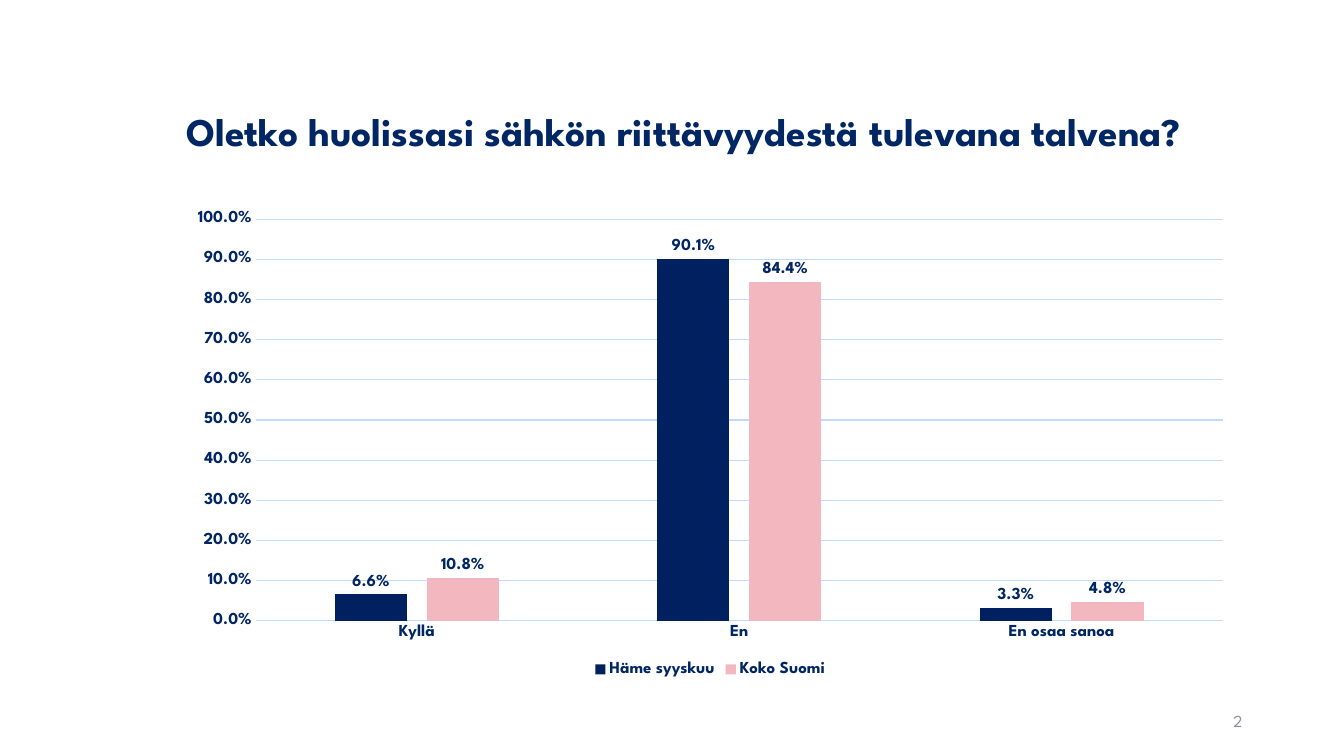
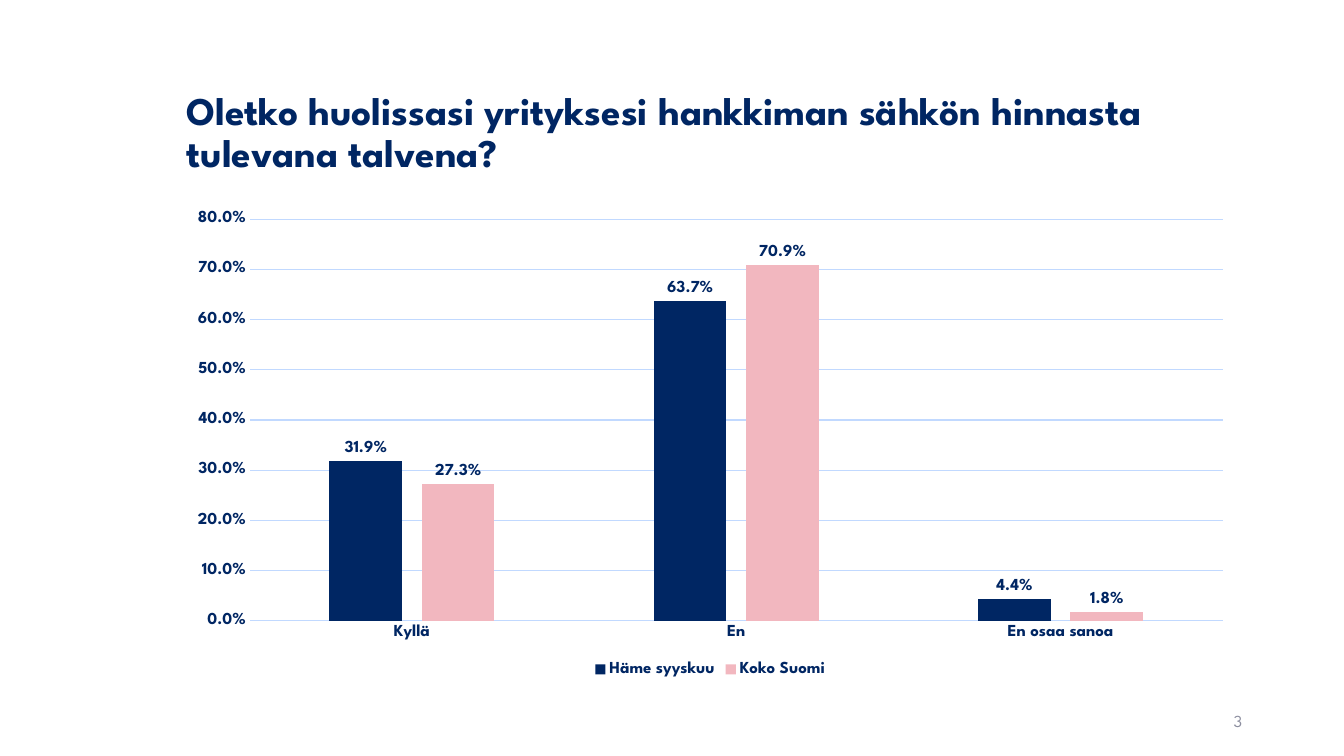
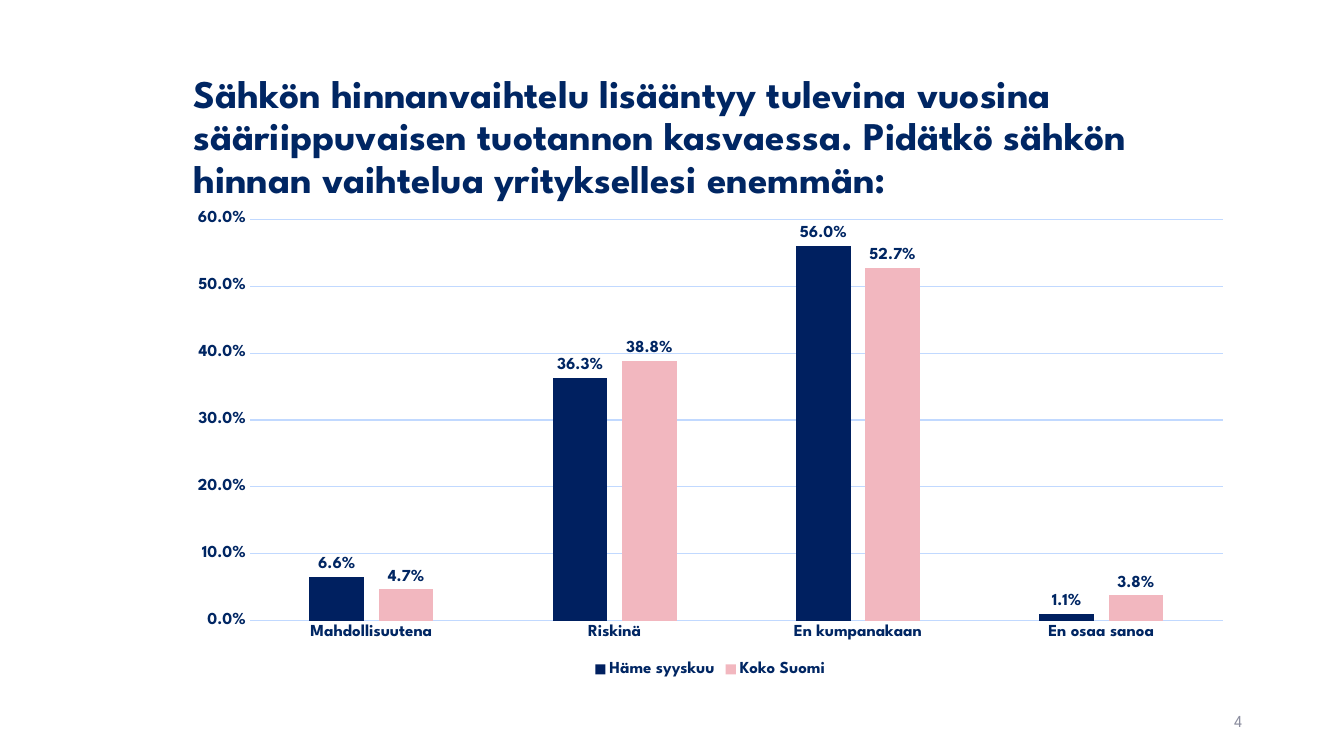
"""Build three survey slides, each with a question and a column chart of the answers."""

from dataclasses import dataclass

from pptx import Presentation
from pptx.chart.data import CategoryChartData
from pptx.dml.color import RGBColor
from pptx.enum.chart import XL_CHART_TYPE, XL_LABEL_POSITION, XL_LEGEND_POSITION, XL_TICK_MARK
from pptx.enum.text import MSO_ANCHOR, MSO_AUTO_SIZE, PP_ALIGN
from pptx.util import Inches, Pt

COLUMN_CLUSTERED = XL_CHART_TYPE.COLUMN_CLUSTERED
OUTSIDE_END = XL_LABEL_POSITION.OUTSIDE_END
LEGEND_BOTTOM = XL_LEGEND_POSITION.BOTTOM
NO_TICK = XL_TICK_MARK.NONE
MIDDLE = MSO_ANCHOR.MIDDLE
NO_AUTOFIT = MSO_AUTO_SIZE.NONE
LEFT, RIGHT = PP_ALIGN.LEFT, PP_ALIGN.RIGHT

FONT = "League Spartan"
NAVY = "002663"
DEEP_NAVY = "002060"
PINK = "F2B7BF"
GRID_BLUE = "C1D9FF"
GREY = "8C8E9F"
PERCENT = "0.0%"
TITLE_ONLY = 5
FIRST_NUMBER = 2
YES_NO = ("Kyllä", "En", "En osaa sanoa")


@dataclass(frozen=True)
class Question:
    """A survey question with its answers by region."""

    title: str
    answers: tuple[str, ...]
    hame: tuple[float, ...]
    finland: tuple[float, ...]
    axis_top: float
    hame_color: str = DEEP_NAVY
    title_left: float = 1.75
    title_top: float = 0.57


QUESTIONS = (
    Question(
        "Oletko huolissasi sähkön riittävyydestä tulevana talvena?",
        YES_NO, (0.066, 0.901, 0.033), (0.108, 0.844, 0.048), 1.0,
    ),
    Question(
        "Oletko huolissasi yrityksesi hankkiman sähkön hinnasta tulevana talvena?",
        YES_NO, (0.319, 0.637, 0.044), (0.273, 0.709, 0.018), 0.8,
        hame_color=NAVY,
    ),
    Question(
        "Sähkön hinnanvaihtelu lisääntyy tulevina vuosina sääriippuvaisen tuotannon "
        "kasvaessa. Pidätkö sähkön hinnan vaihtelua yrityksellesi enemmän:",
        ("Mahdollisuutena", "Riskinä", "En kumpanakaan", "En osaa sanoa"),
        (0.066, 0.363, 0.56, 0.011), (0.047, 0.388, 0.527, 0.038), 0.6,
        title_left=1.82, title_top=0.61,
    ),
)


def rgb(color: str) -> RGBColor:
    """Turn a hex string into a colour."""
    return RGBColor.from_string(color)


def style_font(font, size: float = 12, color: str = NAVY, bold: bool = True) -> None:
    """Apply the shared typeface with a size, colour and weight."""
    font.name = FONT
    font.size = Pt(size)
    font.bold = bold
    font.color.rgb = rgb(color)


def style_line(line) -> None:
    """Draw a chart line in the pale grid colour."""
    line.color.rgb = rgb(GRID_BLUE)
    line.width = Pt(0.75)


def add_title(slide, question: Question) -> None:
    """Place the question in the title placeholder."""
    title = slide.shapes.title
    title.left, title.top = Inches(question.title_left), Inches(question.title_top)
    title.width, title.height = Inches(10.59), Inches(1.52)
    frame = title.text_frame
    frame.text = question.title
    frame.word_wrap = True
    frame.auto_size = NO_AUTOFIT
    frame.vertical_anchor = MIDDLE
    heading = frame.paragraphs[0]
    heading.alignment = LEFT
    heading.line_spacing = 0.9
    style_font(heading.runs[0].font, 28)


def add_page_number(slide, number: int) -> None:
    """Write the page number at the lower right."""
    frame = slide.shapes.add_textbox(
        Inches(9.42), Inches(6.95), Inches(3), Inches(0.4)
    ).text_frame
    frame.text = str(number)
    frame.word_wrap = True
    frame.vertical_anchor = MIDDLE
    page = frame.paragraphs[0]
    page.alignment = RIGHT
    style_font(page.runs[0].font, 12, GREY, False)


def style_axes(chart, axis_top: float) -> None:
    """Format both axes and the grid."""
    answers, shares = chart.category_axis, chart.value_axis
    for axis in (answers, shares):
        axis.major_tick_mark = NO_TICK
        axis.minor_tick_mark = NO_TICK
        style_font(axis.tick_labels.font)
    style_line(answers.format.line)
    shares.format.line.fill.background()
    shares.has_major_gridlines = True
    style_line(shares.major_gridlines.format.line)
    shares.minimum_scale, shares.maximum_scale = 0, axis_top
    shares.major_unit = 0.1
    shares.tick_labels.number_format = PERCENT
    shares.tick_labels.number_format_is_linked = False


def style_series(series, color: str) -> None:
    """Fill the columns and label them with their values."""
    series.format.fill.solid()
    series.format.fill.fore_color.rgb = rgb(color)
    series.invert_if_negative = False
    labels = series.data_labels
    labels.show_value = True
    labels.position = OUTSIDE_END
    labels.number_format = PERCENT
    labels.number_format_is_linked = False
    style_font(labels.font)


def add_answer_chart(slide, question: Question) -> None:
    """Compare the regional answers with the whole country."""
    data = CategoryChartData(number_format=PERCENT)
    data.categories = question.answers
    data.add_series("Häme syyskuu", question.hame)
    data.add_series("Koko Suomi", question.finland)
    chart = slide.shapes.add_chart(
        COLUMN_CLUSTERED, Inches(1.75), Inches(2), Inches(10.59), Inches(4.76), data
    ).chart
    chart.has_title = False
    style_font(chart.font)
    chart.has_legend = True
    chart.legend.position = LEGEND_BOTTOM
    chart.legend.include_in_layout = False
    style_font(chart.legend.font)
    style_axes(chart, question.axis_top)
    columns = chart.plots[0]
    columns.vary_by_categories = False
    columns.gap_width = 219
    columns.overlap = -27
    for series, color in zip(columns.series, (question.hame_color, PINK)):
        style_series(series, color)


def main() -> None:
    """Build and save the presentation."""
    deck = Presentation()
    deck.slide_width, deck.slide_height = Inches(13.33), Inches(7.5)
    for number, question in enumerate(QUESTIONS, FIRST_NUMBER):
        slide = deck.slides.add_slide(deck.slide_layouts[TITLE_ONLY])
        add_title(slide, question)
        add_page_number(slide, number)
        add_answer_chart(slide, question)
    deck.save("out.pptx")


if __name__ == "__main__":
    main()
